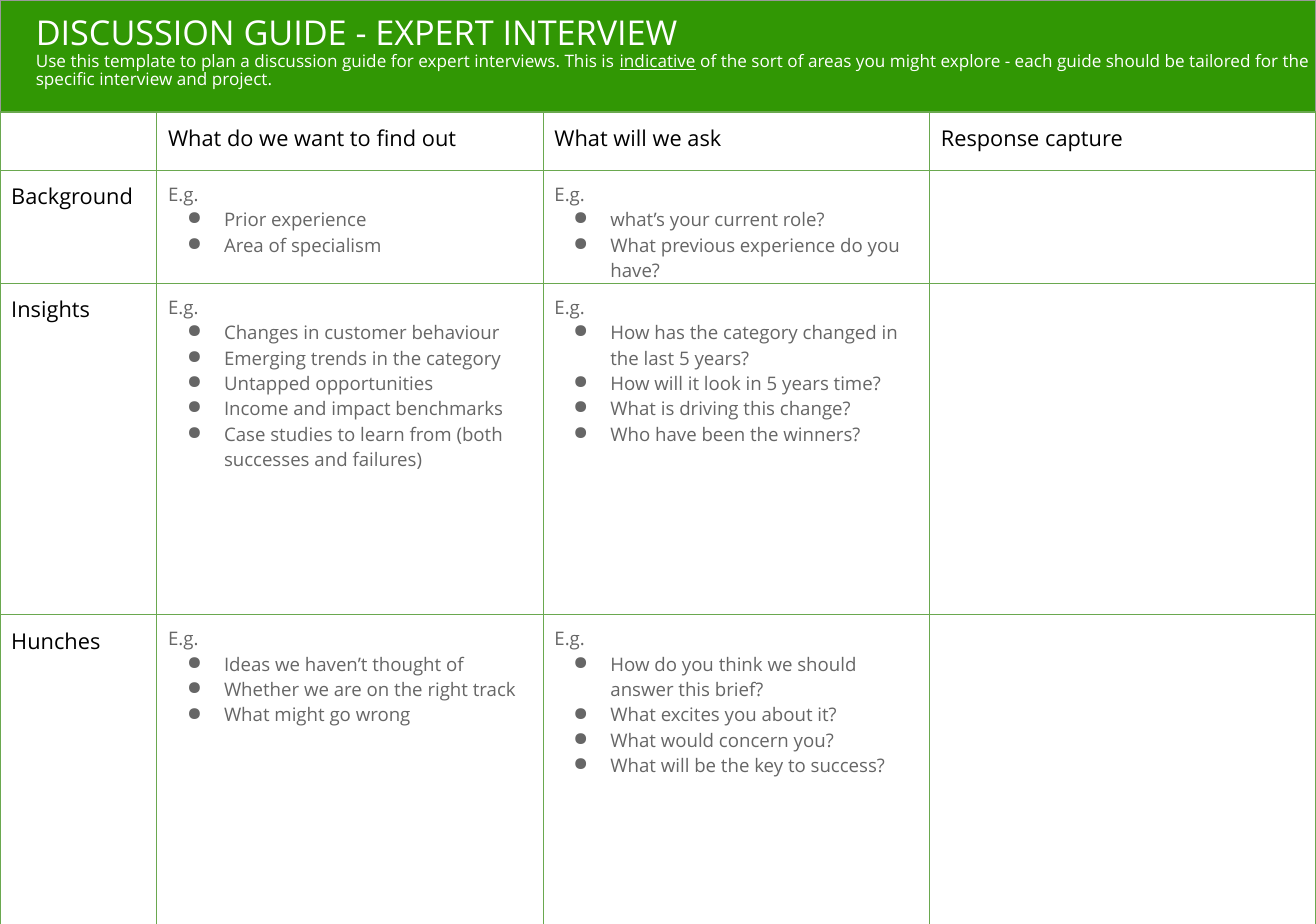
from pptx import Presentation
from pptx.dml.color import RGBColor
from pptx.enum.shapes import MSO_SHAPE
from pptx.enum.text import MSO_ANCHOR, MSO_AUTO_SIZE, PP_ALIGN
from pptx.oxml.ns import qn
from pptx.util import Inches, Pt
from lxml import etree

RECT = MSO_SHAPE.RECTANGLE
TOP = MSO_ANCHOR.TOP
FIXED = MSO_AUTO_SIZE.NONE
LEFT = PP_ALIGN.LEFT

GREEN = RGBColor(0x31, 0x97, 0x04)
LEAF = RGBColor(0x6A, 0xA8, 0x4F)
SILVER = RGBColor(0x99, 0x99, 0x99)
GREY = RGBColor(0x66, 0x66, 0x66)
BLACK = RGBColor(0, 0, 0)
WHITE = RGBColor(0xFF, 0xFF, 0xFF)
FONT = "Open Sans"

# Content
TITLE = "DISCUSSION GUIDE - EXPERT INTERVIEW"
INTRO = [
    ("Use this template to plan a discussion guide for expert interviews. This is ", False),
    ("indicative", True),
    (" of the sort of areas you might explore - each guide should be tailored "
     "for the specific interview and project.", False),
]
HEADS = ["", "What do we want to find out", "What will we ask", "Response capture"]
LEAD = "E.g."
TOPICS = [
    ("Background",
     ["Prior experience", "Area of specialism"],
     ["what’s your current role?", "What previous experience do you have?"]),
    ("Insights",
     ["Changes in customer behaviour", "Emerging trends in the category",
      "Untapped opportunities", "Income and impact benchmarks",
      "Case studies to learn from (both successes and failures)"],
     ["How has the category changed in the last 5 years?",
      "How will it look in 5 years time?", "What is driving this change?",
      "Who have been the winners?"]),
    ("Hunches",
     ["Ideas we haven’t thought of", "Whether we are on the right track",
      "What might go wrong"],
     ["How do you think we should answer this brief?",
      "What excites you about it?", "What would concern you?",
      "What will be the key to success?"]),
]

# Measures in inches
WIDTH, HEIGHT, BAND = 11.75, 8.25, 1
COLS = [1.4, 3.45, 3.45, 3.45]
ROWS = [0.52, 0.99, 2.96, 2.78]
PAD = 0.1


def write(para, text, size=12, color=GREY, under=False, bullet=False):
    run = para.add_run()
    run.text = text
    font = run.font
    font.name, font.size, font.underline = FONT, Pt(size), under
    font.color.rgb = color
    if bullet:
        props = para._p.get_or_add_pPr()
        props.set("marL", str(Inches(0.5)))
        props.set("indent", str(Inches(-0.33)))
        etree.SubElement(props, qn("a:buChar")).set("char", "●")


def border(cell):
    props = cell._tc.get_or_add_tcPr()
    for at, side in enumerate(("lnL", "lnR", "lnT", "lnB")):
        line = etree.Element(qn("a:" + side), w=str(Pt(0.75)))
        fill = etree.SubElement(line, qn("a:solidFill"))
        etree.SubElement(fill, qn("a:srgbClr")).set("val", str(LEAF))
        props.insert(at, line)


def main():
    deck = Presentation()
    deck.slide_width, deck.slide_height = Inches(WIDTH), Inches(HEIGHT)
    slide = deck.slides.add_slide(deck.slide_layouts[5])
    shapes = slide.shapes

    # Green band, placed behind the title
    band = shapes.add_shape(RECT, 0, 0, Inches(WIDTH), Inches(BAND))
    band.shadow.inherit = False
    band.fill.solid()
    band.fill.fore_color.rgb = GREEN
    band.line.color.rgb = SILVER
    band.line.width = Pt(0.75)
    shapes.title._element.addprevious(band._element)

    # Title and introduction
    title = shapes.title
    title.left, title.top = Inches(0.21), Inches(0.03)
    title.width, title.height = Inches(WIDTH), Inches(1.33)
    frame = title.text_frame
    frame.word_wrap, frame.auto_size = True, FIXED
    frame.vertical_anchor = TOP
    frame.margin_left = frame.margin_right = Inches(0.11)
    frame.margin_top = frame.margin_bottom = Inches(0.11)
    head, intro = frame.paragraphs[0], frame.add_paragraph()
    for para in (head, intro):
        para.alignment, para.line_spacing = LEFT, 0.9
    write(head, TITLE, size=22, color=WHITE)
    for text, under in INTRO:
        write(intro, text, size=11, color=WHITE, under=under)

    # Table grid
    table = shapes.add_table(len(ROWS), len(COLS), 0, Inches(BAND),
                             Inches(sum(COLS)), Inches(sum(ROWS))).table
    table.first_row = table.horz_banding = False
    for col, size in zip(table.columns, COLS):
        col.width = Inches(size)
    for row, size in zip(table.rows, ROWS):
        row.height = Inches(size)
    for cell in table.iter_cells():
        cell.fill.background()
        cell.margin_left = cell.margin_right = cell.margin_top = Inches(PAD)
        cell.margin_bottom = 0
        border(cell)

    # Table text
    for col, text in enumerate(HEADS):
        if text:
            write(table.cell(0, col).text_frame.paragraphs[0], text, size=14, color=BLACK)
    for row, (name, *lists) in enumerate(TOPICS, 1):
        write(table.cell(row, 0).text_frame.paragraphs[0], name, size=14, color=BLACK)
        for col, items in enumerate(lists, 1):
            frame = table.cell(row, col).text_frame
            write(frame.paragraphs[0], LEAD)
            for item in items:
                write(frame.add_paragraph(), item, bullet=True)

    deck.save("out.pptx")


if __name__ == "__main__":
    main()
